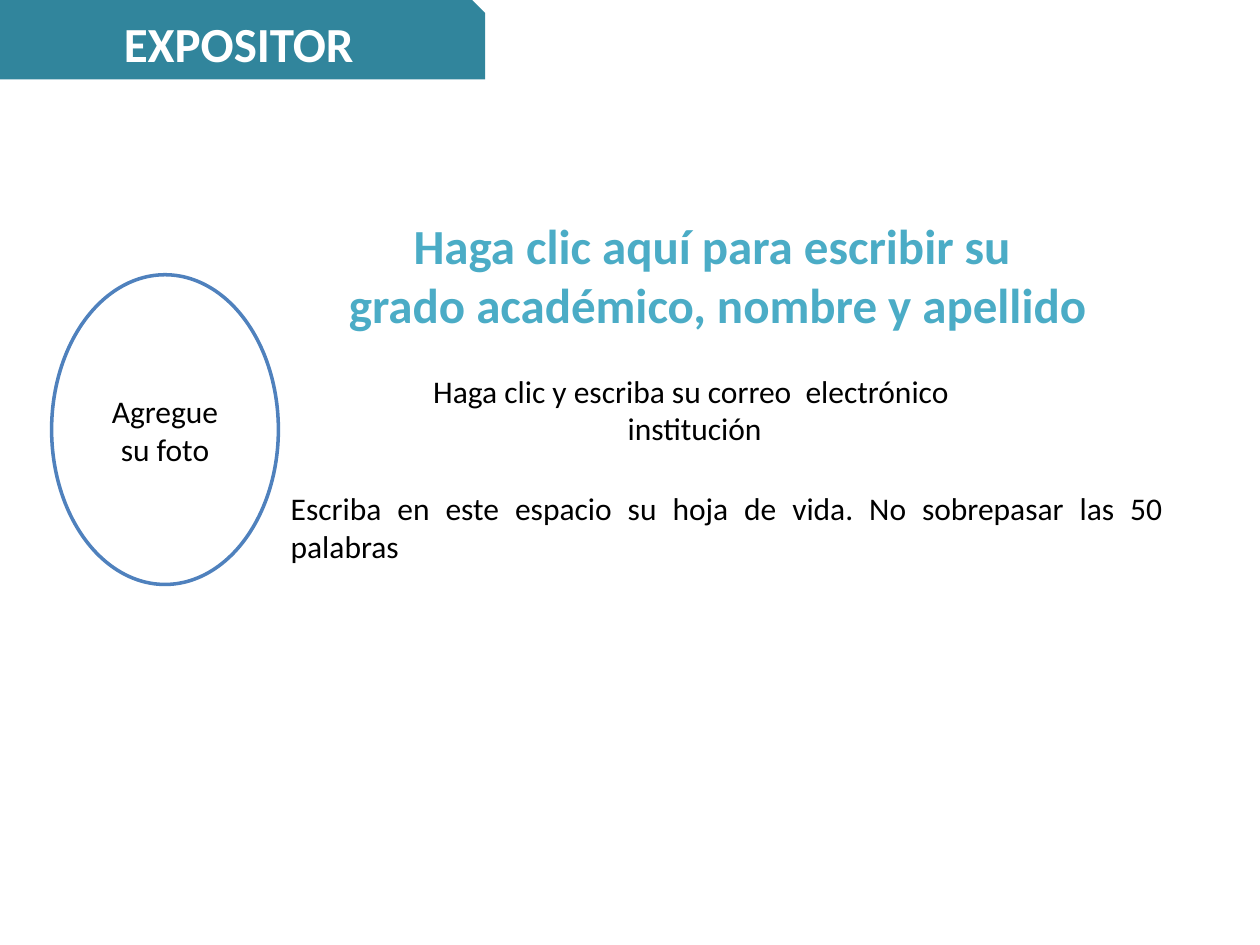
from pptx import Presentation
from pptx import util as u
from pptx.dml import color
from pptx.enum import shapes, text

Pt = u.Pt
SHAPE = shapes.MSO_SHAPE
ALIGN = text.PP_ALIGN


def rgb(value):
    return color.RGBColor.from_string(value)


class Deck:
    font = "Calibri"
    body = {"size": Pt(18), "bold": False}
    heading = {"size": Pt(28), "bold": True}

    def __init__(self, width, height):
        self.prs = Presentation()
        self.prs.slide_width, self.prs.slide_height = Pt(width), Pt(height)
        self.s = self.prs.slides.add_slide(self.prs.slide_layouts[6])

    def fill_text(self, tf, lines, style, ink, align):
        """Fill a text frame with one paragraph per line."""
        tf.word_wrap = True
        for i, line in enumerate(lines):
            p = tf.add_paragraph() if i else tf.paragraphs[0]
            p.alignment = align
            r = p.add_run()
            r.text = line
            for name, value in {"name": self.font, **style}.items():
                setattr(r.font, name, value)
            r.font.color.rgb = rgb(ink)

    def text(self, box, lines, style, ink="000000", align=ALIGN.CENTER):
        tf = self.s.shapes.add_textbox(*map(Pt, box)).text_frame
        tf.auto_size = text.MSO_AUTO_SIZE.SHAPE_TO_FIT_TEXT
        self.fill_text(tf, lines, style, ink, align)

    def shape(self, kind, box, fill, label, style, ink, line=None):
        sp = self.s.shapes.add_shape(kind, *map(Pt, box))
        sp.shadow.inherit = False
        sp.fill.solid()
        sp.fill.fore_color.rgb = rgb(fill)
        if line:
            sp.line.color.rgb = rgb(line)
            sp.line.width = Pt(2)
        else:
            sp.line.fill.background()
        sp.text_frame.vertical_anchor = text.MSO_ANCHOR.MIDDLE
        self.fill_text(sp.text_frame, [label], style, ink, ALIGN.CENTER)


def main():
    deck = Deck(720, 540)
    deck.shape(SHAPE.OVAL, (29.5, 157, 129.6, 177), "FFFFFF",
               "Agregue su foto", deck.body, "000000", line="4F81BD")
    deck.text((159, 275.8, 512.6, 51), [
        "Escriba en este espacio su hoja de vida. No sobrepasar las 50 palabras",
    ], deck.body, align=ALIGN.JUSTIFY)
    deck.text((159, 119.5, 502, 75), [
        "Haga clic aquí para escribir su ",
        "grado académico, nombre y apellido",
    ], deck.heading, "4BACC6")
    deck.text((180.7, 208.8, 428.4, 51), [
        "Haga clic y escriba su correo  electrónico",
        " institución",
    ], deck.body)
    deck.shape(SHAPE.SNIP_1_RECTANGLE, (-0.7, 0, 278, 45.4), "31859C",
               "EXPOSITOR", deck.heading, "FFFFFF")
    deck.prs.save("out.pptx")


if __name__ == "__main__":
    main()
